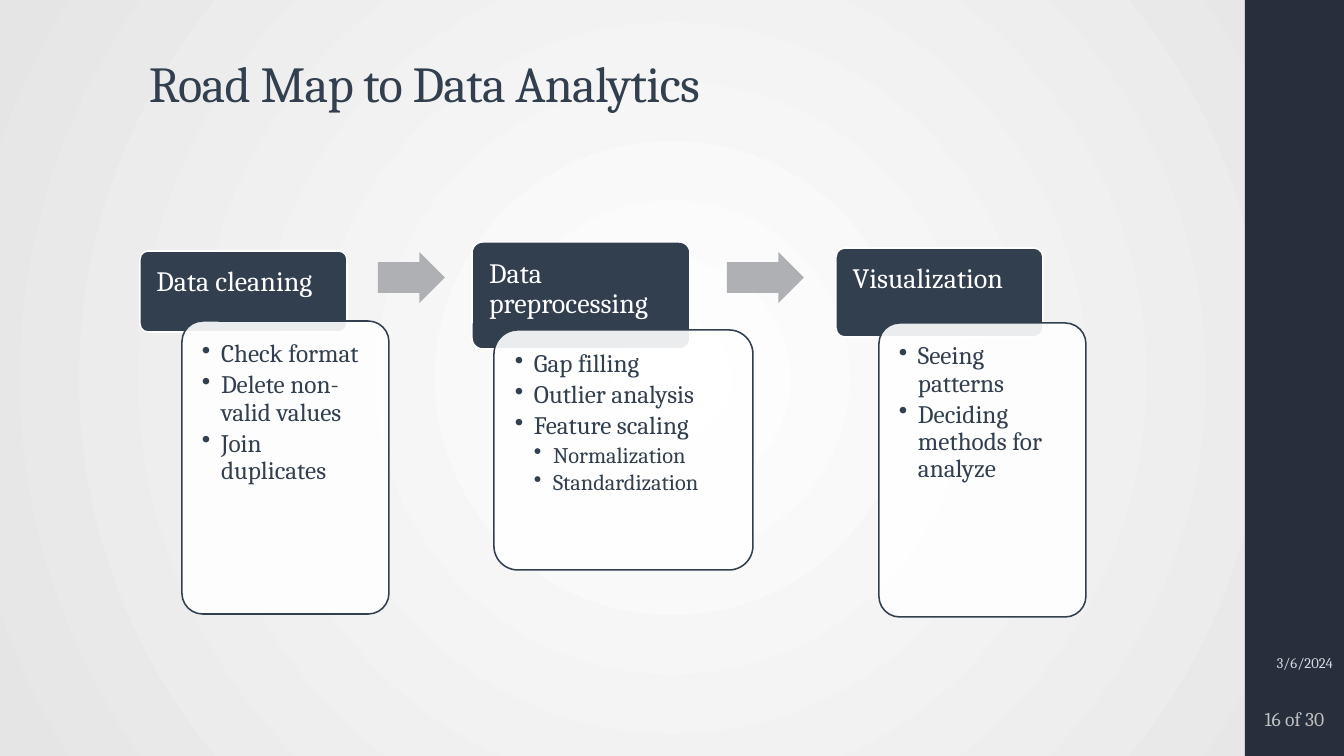
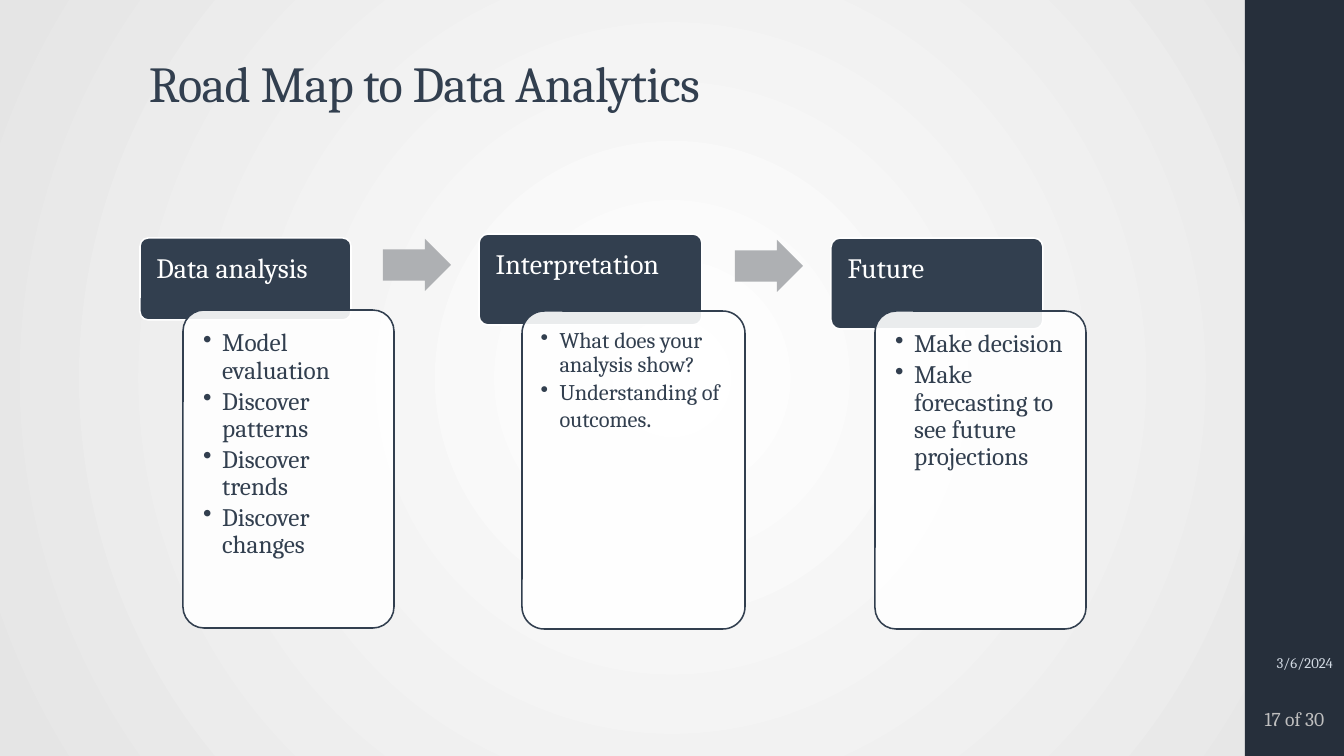
from dataclasses import dataclass

import pptx
import pptx.dml.color
import pptx.enum.shapes
import pptx.enum.text
import pptx.oxml
import pptx.oxml.ns
import pptx.util
from lxml import etree

RGBColor = pptx.dml.color.RGBColor
MSO_SHAPE = pptx.enum.shapes.MSO_SHAPE
MSO_ANCHOR = pptx.enum.text.MSO_ANCHOR
PP_ALIGN = pptx.enum.text.PP_ALIGN
qn = pptx.oxml.ns.qn

EMU_PER_PX = 914400 / 100.8
SLIDE_WIDTH, SLIDE_HEIGHT = 1344, 756
BAND_LEFT = 1245
BAND_WIDTH = SLIDE_WIDTH - BAND_LEFT

FONT = "Cambria"
WHITE = RGBColor(0xFF, 0xFF, 0xFF)
BACKDROP_EDGE = RGBColor(0xE5, 0xE5, 0xE5)
NAVY = RGBColor(0x32, 0x3F, 0x4F)
BAND_NAVY = RGBColor(0x26, 0x2F, 0x3B)
ARROW_GRAY = RGBColor(0xAE, 0xB0, 0xB3)
NUMBER_GRAY = RGBColor(0xBF, 0xBF, 0xBF)
DATE_BLUE = RGBColor(0xD0, 0xD8, 0xE1)

TITLE = "Road Map to Data Analytics"
DATE = "3/6/2024"
SLIDE_TOTAL = 30
BULLET_INDENT = 19
CORNER = 0.1
OUTLINE = 1.1


@dataclass
class Item:
    """One bullet, with an optional ending at the standard size."""
    text: str
    level: int = 0
    size: int = 18
    ending: str = ""


@dataclass
class Stage:
    """A heading tab at the top left of a box and a card at its bottom right."""
    heading: str
    box: tuple
    tab_size: tuple
    card_offset: tuple
    items: list
    card_inset: int = 14


ROAD_MAPS = [
    (16, [
        Stage("Data cleaning", (140, 251, 249, 363), (207, 81), (42, 70), [
            Item("Check format"),
            Item("Delete non-valid values"),
            Item("Join duplicates")]),
        Stage("Data preprocessing", (472, 242, 281, 328), (218, 107), (22, 88), [
            Item("Gap filling"),
            Item("Outlier analysis"),
            Item("Feature scaling"),
            Item("Normalization", level=1, size=16),
            Item("Standardization", level=1, size=16)]),
        Stage("Visualization", (836, 248, 250, 369), (207, 89), (43, 75), [
            Item("Seeing patterns"),
            Item("Deciding methods for analyze")]),
    ], [(378, 252, 67, 51), (727, 252, 77, 51)]),
    (17, [
        Stage("Data analysis", (140, 238, 254, 390), (211, 82), (43, 72), [
            Item("Model evaluation"),
            Item("Discover patterns"),
            Item("Discover trends"),
            Item("Discover changes")]),
        Stage("Interpretation", (479, 234, 266, 395), (223, 91), (43, 77), [
            Item("What does your analysis show?", size=16),
            Item("Understanding of outcomes", size=16, ending=".")], card_inset=12),
        Stage("Future", (831, 238, 255, 391), (212, 91), (44, 73), [
            Item("Make decision"),
            Item("Make forecasting to see future projections")]),
    ], [(383, 239, 68, 52), (735, 240, 68, 52)]),
]


def px(length):
    """Turn pixels into EMU."""
    return pptx.util.Emu(round(length * EMU_PER_PX))


def style_paragraph(paragraph, size, color, alignment=PP_ALIGN.LEFT):
    """Give a paragraph its font and alignment."""
    paragraph.alignment = alignment
    paragraph.font.name = FONT
    paragraph.font.size = pptx.util.Pt(size)
    paragraph.font.color.rgb = color


def add_label(slide, box, text, size, color, alignment=PP_ALIGN.LEFT, side_inset=10):
    """Add one vertically centred line of text and return its paragraph."""
    frame = slide.shapes.add_textbox(*map(px, box)).text_frame
    frame.word_wrap = True
    frame.vertical_anchor = MSO_ANCHOR.MIDDLE
    frame.margin_left = frame.margin_right = px(side_inset)
    frame.margin_top = frame.margin_bottom = px(5)
    paragraph = frame.paragraphs[0]
    paragraph.text = text
    style_paragraph(paragraph, size, color, alignment)
    return paragraph


def add_filled_shape(slide, preset, box, fill, line=None):
    """Add a flat preset shape, outlined only if a line colour is given."""
    shape = slide.shapes.add_shape(preset, *map(px, box))
    shape.shadow.inherit = False
    shape.fill.solid()
    shape.fill.fore_color.rgb = fill
    if line is None:
        shape.line.fill.background()
    else:
        shape.line.color.rgb = line
        shape.line.width = pptx.util.Pt(OUTLINE)
    return shape


def add_rounded_panel(slide, box, fill, line, inset):
    """Add a rounded rectangle whose text starts at the top left."""
    panel = add_filled_shape(slide, MSO_SHAPE.ROUNDED_RECTANGLE, box, fill, line)
    panel.adjustments[0] = CORNER
    frame = panel.text_frame
    frame.word_wrap = True
    frame.vertical_anchor = MSO_ANCHOR.TOP
    frame.margin_left = frame.margin_right = px(inset)
    frame.margin_top = frame.margin_bottom = px(inset)
    return panel


def add_bullet(paragraph, item):
    """Write one bulleted item into a paragraph."""
    paragraph.text = item.text
    paragraph.level = item.level
    paragraph.line_spacing = 0.9
    paragraph.space_after = pptx.util.Pt(0.15 * item.size)
    properties = paragraph._p.get_or_add_pPr()
    properties.set("marL", str(px(BULLET_INDENT * (item.level + 1))))
    properties.set("indent", str(px(-BULLET_INDENT)))
    etree.SubElement(properties, qn("a:buChar"), char="•")
    style_paragraph(paragraph, item.size, NAVY)
    if item.ending:
        run = paragraph.add_run()
        run.text = item.ending
        run.font.size = pptx.util.Pt(18)


def add_stage(slide, stage):
    """Draw the heading tab and the overlapping bullet card of a stage."""
    left, top, width, height = stage.box
    tab = add_rounded_panel(slide, (left, top, *stage.tab_size), NAVY, WHITE, 14)
    heading = tab.text_frame.paragraphs[0]
    heading.text = stage.heading
    heading.line_spacing = 0.9
    style_paragraph(heading, 20, WHITE)

    across, down = stage.card_offset
    card_box = (left + across, top + down, width - across, height - down)
    card = add_rounded_panel(slide, card_box, WHITE, NAVY, stage.card_inset)
    fill_color = card._element.spPr.find(".//" + qn("a:srgbClr"))
    etree.SubElement(fill_color, qn("a:alpha"), val="90000")
    frame = card.text_frame
    for index, item in enumerate(stage.items):
        add_bullet(frame.add_paragraph() if index else frame.paragraphs[0], item)


def add_arrow(slide, box):
    """Draw a block arrow between two stages."""
    arrow = add_filled_shape(slide, MSO_SHAPE.RIGHT_ARROW, box, ARROW_GRAY)
    arrow.adjustments[0] = 0.6
    arrow.adjustments[1] = 0.5


def add_side_band(slide, box, number):
    """Draw the dark side band with the date and slide number."""
    left, top, width, height = box
    add_filled_shape(slide, MSO_SHAPE.RECTANGLE, box, BAND_NAVY)
    add_label(slide, (left, top + 643, width - 1, 40), DATE, 10.5, DATE_BLUE,
              PP_ALIGN.RIGHT)
    add_label(slide, (left, top + 686, width, 66), f"{number} of {SLIDE_TOTAL}", 14,
              NUMBER_GRAY, PP_ALIGN.CENTER, side_inset=5)


def add_title(slide, box):
    """Write the slide title with slightly tightened letters."""
    paragraph = add_label(slide, box, TITLE, 36, NAVY)
    paragraph.line_spacing = 0.9
    paragraph.runs[0]._r.get_or_add_rPr().set("spc", "-50")


def set_background(master):
    """Give the master a radial gradient from white to light gray."""
    fill = master.background.fill
    fill.gradient()
    for stop, color in zip(fill.gradient_stops, (WHITE, BACKDROP_EDGE)):
        stop.color.rgb = color
    linear = master._element.find(".//" + qn("p:bg") + "//" + qn("a:lin"))
    circle = etree.Element(qn("a:path"), path="circle")
    etree.SubElement(circle, qn("a:fillToRect"),
                     {side: "100000" for side in "ltrb"})
    linear.getparent().replace(linear, circle)


def add_road_map(presentation, number, stages, arrows):
    """Add one road map slide."""
    slide = presentation.slides.add_slide(presentation.slide_layouts[6])
    add_side_band(slide, (BAND_LEFT, 0, BAND_WIDTH, SLIDE_HEIGHT), number)
    add_title(slide, (139, 40, 1068, 92))
    for stage in stages:
        add_stage(slide, stage)
    for arrow_box in arrows:
        add_arrow(slide, arrow_box)


def main():
    """Build and save the presentation."""
    presentation = pptx.Presentation()
    presentation.slide_width = px(SLIDE_WIDTH)
    presentation.slide_height = px(SLIDE_HEIGHT)
    set_background(presentation.slide_master)
    for number, stages, arrows in ROAD_MAPS:
        add_road_map(presentation, number, stages, arrows)
    presentation.save("out.pptx")


if __name__ == "__main__":
    main()
